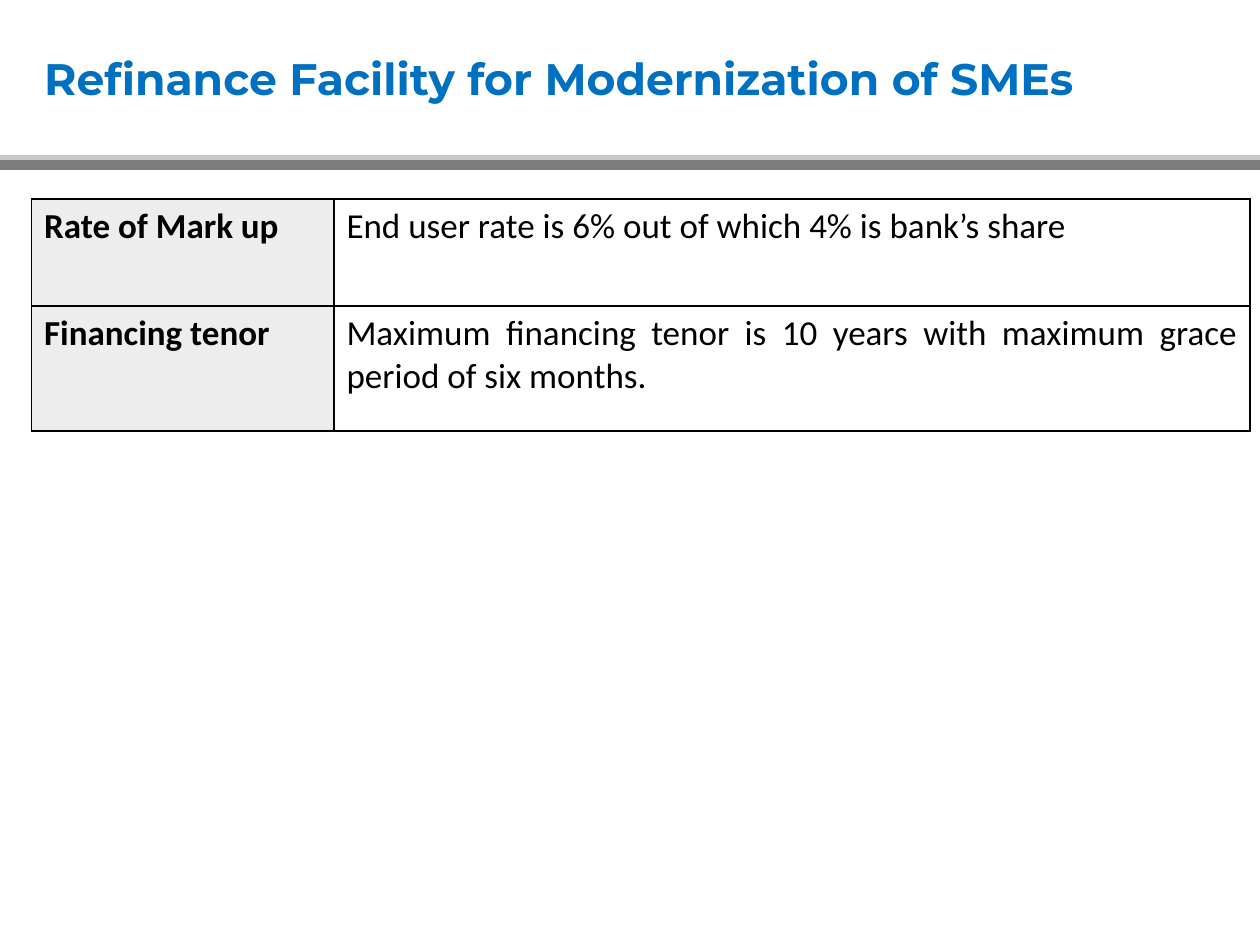
"""Build the SME refinance facility slide."""
from dataclasses import dataclass

from lxml import etree
from pptx import Presentation
from pptx import util as u
from pptx.dml.color import RGBColor
from pptx.enum import shapes, text
from pptx.oxml.ns import qn
from pptx.slide import Slide
from pptx.table import Table, _Cell
from pptx.text.text import _Paragraph


@dataclass(frozen=True)
class Theme:
    title_font: str = "Montserrat"
    body_font: str = "Calibri"
    title_size: float = 25.2
    body_size: float = 20
    title_color: str = "0070C0"
    ink: str = "000000"
    label_fill: str = "EDEDED"
    rule_light: str = "C9C9C9"
    rule_dark: str = "7C7C7C"
    rule_width: float = 6
    border_width: float = 1


@dataclass(frozen=True)
class Rule:
    top: float
    color: str


@dataclass(frozen=True)
class Term:
    label: str
    detail: str
    height: float
    justified: bool = False


THEME = Theme()
SLIDE_WIDTH, SLIDE_HEIGHT = 720, 540
LEFT = 18
TABLE_TOP = 113.76
COLUMN_WIDTHS = (172.8, 523.44)
RULES = (Rule(91.44, THEME.rule_light), Rule(94.32, THEME.rule_dark))
TERMS = (
    Term("Rate of Mark up", "End user rate is 6% out of which 4% is bank’s share", 61.2),
    Term(
        "Financing tenor",
        "Maximum financing tenor is 10 years with maximum grace period of six months.",
        71.28,
        justified=True,
    ),
)


def add_run(paragraph: _Paragraph, words: str, font: str, size: float, color: str, bold: bool) -> None:
    run = paragraph.add_run()
    run.text = words
    run.font.name = font
    run.font.size = u.Pt(size)
    run.font.bold = bold
    run.font.color.rgb = RGBColor.from_string(color)


def draw_rule(slide: Slide, rule: Rule) -> None:
    top = u.Pt(rule.top)
    connector = slide.shapes.add_connector(
        shapes.MSO_CONNECTOR.STRAIGHT, u.Pt(0), top, u.Pt(SLIDE_WIDTH), top
    )
    connector.line.color.rgb = RGBColor.from_string(rule.color)
    connector.line.width = u.Pt(THEME.rule_width)
    etree.SubElement(connector._element.spPr, qn("a:effectLst"))


def write_title(slide: Slide, words: str) -> None:
    title = slide.shapes.title
    title.left, title.top = u.Pt(LEFT), u.Pt(18)
    title.width, title.height = u.Pt(640.8), u.Pt(56.88)
    frame = title.text_frame
    frame.word_wrap = True
    frame.auto_size = text.MSO_AUTO_SIZE.NONE
    frame.vertical_anchor = text.MSO_ANCHOR.MIDDLE
    paragraph = frame.paragraphs[0]
    paragraph.alignment = text.PP_ALIGN.LEFT
    paragraph.line_spacing = 0.9
    add_run(paragraph, words, THEME.title_font, THEME.title_size, THEME.title_color, True)


def set_borders(cell: _Cell) -> None:
    properties = cell._tc.get_or_add_tcPr()
    for position, side in enumerate(("a:lnL", "a:lnR", "a:lnT", "a:lnB")):
        line = etree.Element(qn(side), w=str(u.Pt(THEME.border_width)))
        fill = etree.SubElement(line, qn("a:solidFill"))
        etree.SubElement(fill, qn("a:srgbClr"), val=THEME.ink)
        properties.insert(position, line)


def write_cell(cell: _Cell, words: str, is_label: bool, justified: bool) -> None:
    if is_label:
        cell.fill.solid()
        cell.fill.fore_color.rgb = RGBColor.from_string(THEME.label_fill)
    else:
        cell.fill.background()
    set_borders(cell)
    paragraph = cell.text_frame.paragraphs[0]
    paragraph.alignment = text.PP_ALIGN.JUSTIFY if justified else text.PP_ALIGN.LEFT
    add_run(paragraph, words, THEME.body_font, THEME.body_size, THEME.ink, is_label)


def draw_terms(slide: Slide) -> None:
    table: Table = slide.shapes.add_table(
        len(TERMS), len(COLUMN_WIDTHS), u.Pt(LEFT), u.Pt(TABLE_TOP),
        u.Pt(sum(COLUMN_WIDTHS)), u.Pt(sum(term.height for term in TERMS)),
    ).table
    table.first_row = False
    table.horz_banding = False
    for column, width in zip(table.columns, COLUMN_WIDTHS):
        column.width = u.Pt(width)
    for index, term in enumerate(TERMS):
        table.rows[index].height = u.Pt(term.height)
        write_cell(table.cell(index, 0), term.label, True, False)
        write_cell(table.cell(index, 1), term.detail, False, term.justified)


def main() -> None:
    presentation = Presentation()
    presentation.slide_width = u.Pt(SLIDE_WIDTH)
    presentation.slide_height = u.Pt(SLIDE_HEIGHT)
    slide = presentation.slides.add_slide(presentation.slide_layouts[5])
    for rule in RULES:
        draw_rule(slide, rule)
    write_title(slide, "Refinance Facility for Modernization of SMEs")
    draw_terms(slide)
    presentation.save("out.pptx")


if __name__ == "__main__":
    main()
